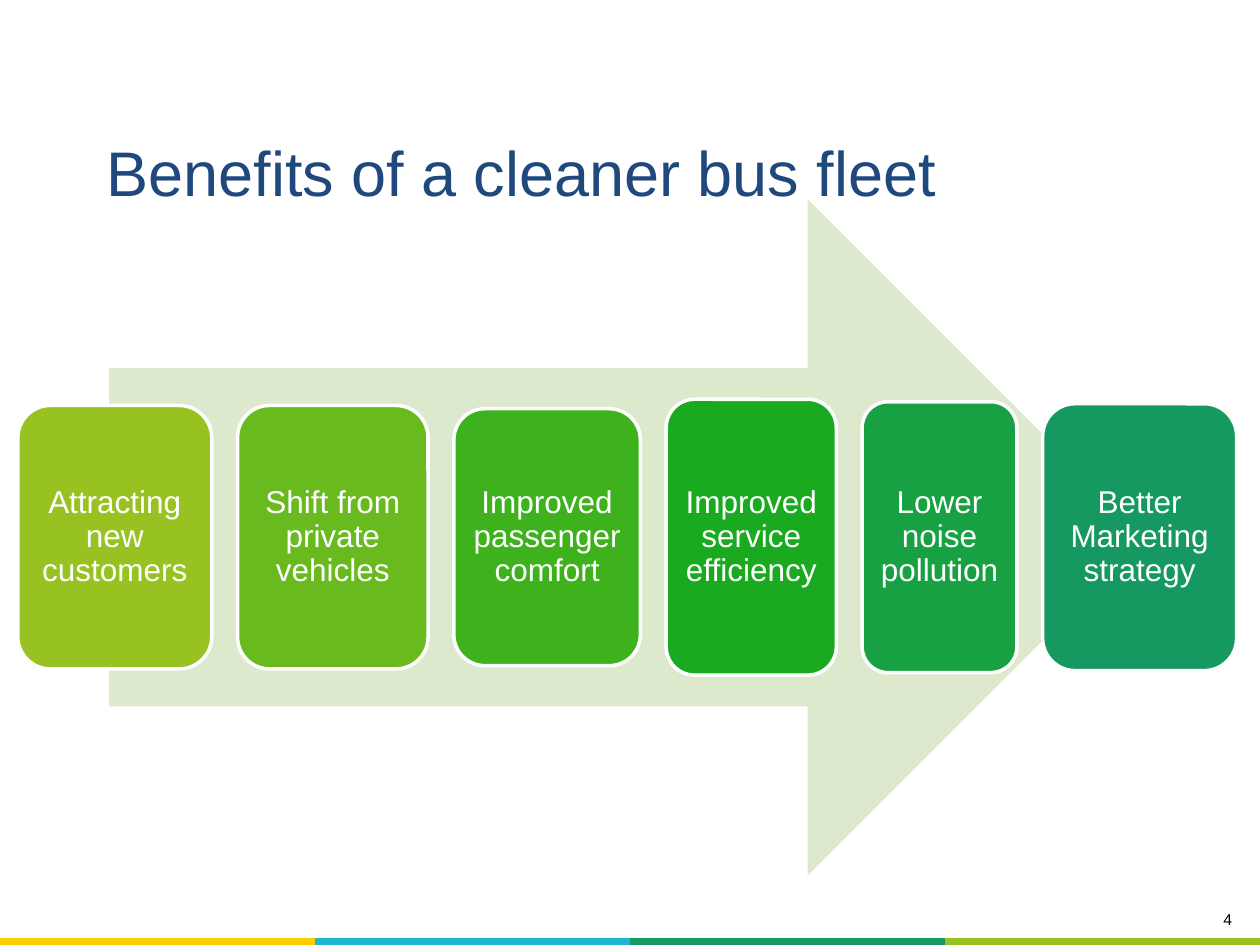
from pptx import Presentation
from pptx.dml.color import RGBColor
from pptx.enum.shapes import MSO_SHAPE as SHAPE
from pptx.enum.text import MSO_ANCHOR as ANCHOR, PP_ALIGN as ALIGN
from pptx.oxml.ns import qn
from pptx.util import Cm, Pt

NO_GRID_STYLE = "{2D5ABB26-0587-4C30-8999-92F81FD0307C}"


def rgb(value):
    return RGBColor.from_string(value)


class Deck:
    font = "Arial"
    navy, black, white, pale = "1F497D", "000000", "FFFFFF", "DDE9CD"

    def __init__(self, width, height):
        self.prs = Presentation()
        self.prs.slide_width, self.prs.slide_height = Cm(width), Cm(height)
        self.s = self.prs.slides.add_slide(self.prs.slide_layouts[6])

    def add_text(self, sp, text, size, color, align, inset_x, inset_y):
        tf = sp.text_frame
        tf.word_wrap = True
        tf.vertical_anchor = ANCHOR.MIDDLE
        tf.margin_left = tf.margin_right = Cm(inset_x)
        tf.margin_top = tf.margin_bottom = Cm(inset_y)
        p = tf.paragraphs[0]
        p.alignment = align
        r = p.add_run()
        r.text = text
        r.font.name, r.font.size = self.font, Pt(size)
        r.font.color.rgb = rgb(color)
        return p

    def label(self, x, y, w, h, text, size, color, align=ALIGN.LEFT, inset_y=0.25):
        sp = self.s.shapes.add_textbox(Cm(x), Cm(y), Cm(w), Cm(h))
        self.add_text(sp, text, size, color, align, 0.25, inset_y)

    def shape(self, kind, x, y, w, h, fill):
        sp = self.s.shapes.add_shape(kind, Cm(x), Cm(y), Cm(w), Cm(h))
        sp.shadow.inherit = False
        sp.fill.solid()
        sp.fill.fore_color.rgb = rgb(fill)
        sp.line.fill.background()
        return sp

    def card(self, x, y, w, h, fill, text):
        sp = self.shape(SHAPE.ROUNDED_RECTANGLE, x, y, w, h, fill)
        sp.line.color.rgb = rgb(self.white)
        sp.line.width = Pt(2)
        p = self.add_text(sp, text, 18, self.white, ALIGN.CENTER, 0.18, 0.18)
        p.line_spacing = 0.9

    def stripe(self, x, y, w, h, colors):
        frame = self.s.shapes.add_table(1, len(colors), Cm(x), Cm(y), Cm(w), Cm(h))
        frame.element.find(".//" + qn("a:tableStyleId")).text = NO_GRID_STYLE
        table = frame.table
        table.first_row = table.horz_banding = False
        for cell, color in zip(table.rows[0].cells, colors):
            cell.fill.solid()
            cell.fill.fore_color.rgb = rgb(color)


def main():
    deck = Deck(25.4, 19.05)

    # Footer stripe and page number
    deck.stripe(0, 18.9, 25.4, 0.43, ["FFCC00", "1CB8CF", "159961", "98C222"])
    deck.label(20.09, 18.14, 5, 0.79, "4", 9, deck.black, ALIGN.RIGHT, 0.13)

    # Title
    deck.label(1.9, 2.46, 21.6, 1.98, "Benefits of a cleaner bus fleet", 36, deck.navy)

    # Background arrow
    deck.shape(SHAPE.RIGHT_ARROW, 2.2, 4.01, 20.9, 13.64, deck.pale)

    # Benefit cards, evenly spaced along the arrow's axis
    benefits = [
        ("Attracting new customers", 3.91, 5.31, "98C222"),
        ("Shift from private vehicles", 3.84, 5.31, "69BA1F"),
        ("Improved passenger comfort", 3.76, 5.18, "3DB21C"),
        ("Improved service efficiency", 3.43, 5.56, "1AAA20"),
        ("Lower noise pollution", 3.12, 5.46, "17A142"),
        ("Better Marketing strategy", 3.91, 5.38, "159960"),
    ]
    x, gap, axis = 0.36, 0.52, 10.83
    for text, w, h, fill in benefits:
        deck.card(x, axis - h / 2, w, h, fill, text)
        x += w + gap

    deck.prs.save("out.pptx")


if __name__ == "__main__":
    main()
